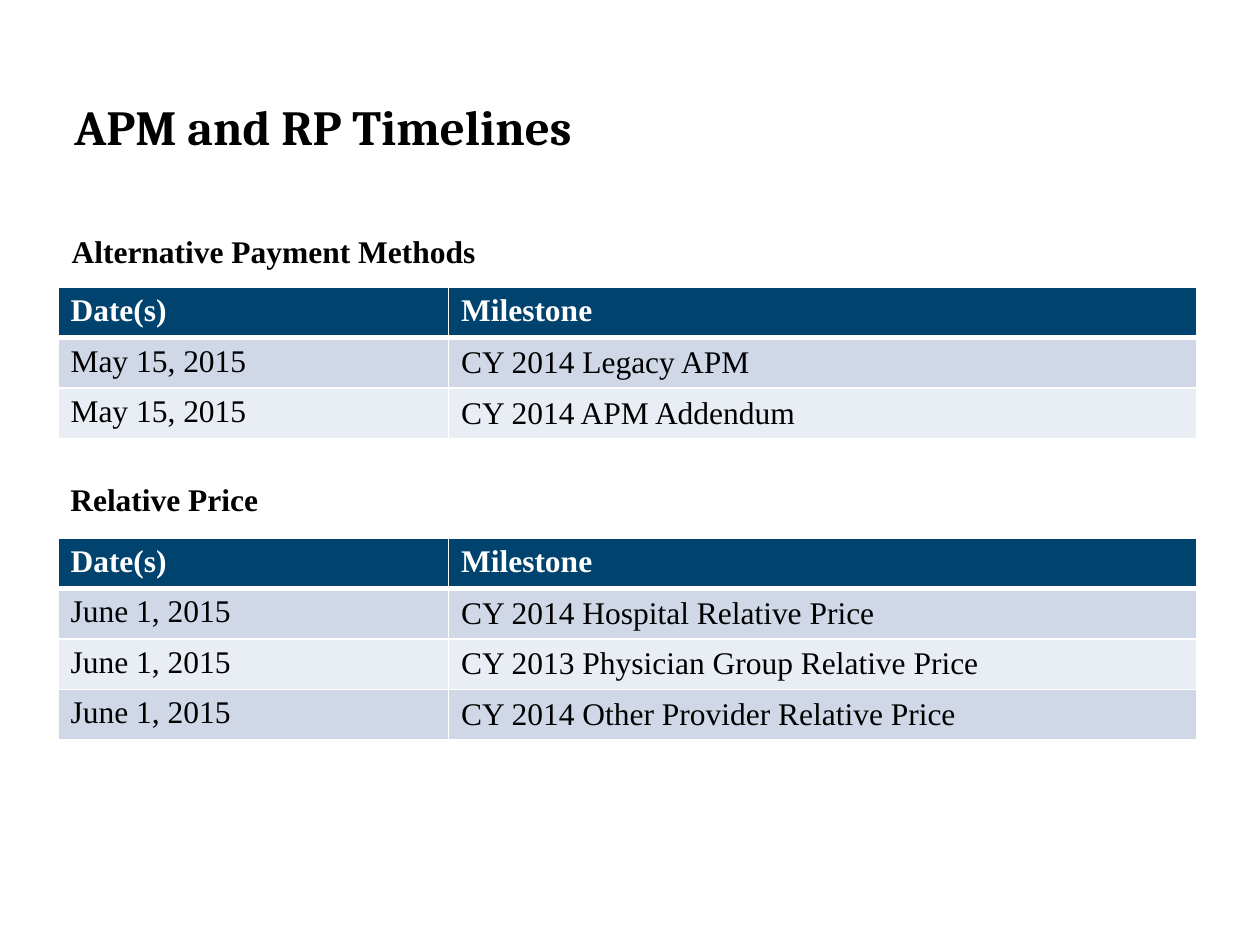
"""Build the APM and RP timelines slide with two milestone tables."""
import pptx
import pptx.dml.color
import pptx.enum.text
import pptx.oxml
import pptx.oxml.ns
import pptx.util

Inches = pptx.util.Inches
Pt = pptx.util.Pt
RGBColor = pptx.dml.color.RGBColor
MSO_ANCHOR = pptx.enum.text.MSO_ANCHOR

TITLE = "APM and RP Timelines"
HEADER = ("Date(s)", "Milestone")
SECTIONS = [
    {
        "heading": "Alternative Payment Methods",
        "heading_at": (0.47, 1.79),
        "table_top": 2.28,
        "rows": [
            ("May 15, 2015", "CY 2014 Legacy APM"),
            ("May 15, 2015", "CY 2014 APM Addendum"),
        ],
    },
    {
        "heading": "Relative Price",
        "heading_at": (0.46, 3.76),
        "table_top": 4.27,
        "rows": [
            ("June 1, 2015", "CY 2014 Hospital Relative Price"),
            ("June 1, 2015", "CY 2013 Physician Group Relative Price"),
            ("June 1, 2015", "CY 2014 Other Provider Relative Price"),
        ],
    },
]

BLACK = RGBColor(0x00, 0x00, 0x00)
WHITE = RGBColor(0xFF, 0xFF, 0xFF)
NAVY = RGBColor(0x00, 0x43, 0x6E)
BANDS = (RGBColor(0xD0, 0xD8, 0xE8), RGBColor(0xE9, 0xED, 0xF4))

TEXT_WIDTH = 8.79
TABLE_LEFT = 0.46
COL_WIDTHS = (3.1, 5.94)
ROW_HEIGHT = 0.4


def style(p, name, size, color, bold):
    p.font.name = name
    p.font.size = Pt(size)
    p.font.color.rgb = color
    p.font.bold = bold


def place(sp, left, top, width, height):
    sp.left, sp.top = Inches(left), Inches(top)
    sp.width, sp.height = Inches(width), Inches(height)


def add_borders(cell, widths):
    tcPr = cell._tc.get_or_add_tcPr()
    for side, width in widths.items():
        tcPr.append(pptx.oxml.parse_xml(
            f'<a:ln{side} {pptx.oxml.ns.nsdecls("a")} w="{Pt(width)}">'
            f'<a:solidFill><a:srgbClr val="{WHITE}"/></a:solidFill></a:ln{side}>'))


def add_heading(slide, text, left, top):
    sp = slide.shapes.add_textbox(
        Inches(left), Inches(top), Inches(TEXT_WIDTH), Inches(0.49))
    tf = sp.text_frame
    tf.word_wrap = True
    p = tf.paragraphs[0]
    p.text = text
    pPr = p._p.get_or_add_pPr()
    pPr.set("marL", str(Inches(0.38)))
    pPr.set("indent", str(Inches(-0.38)))
    style(p, "Times New Roman", 18, BLACK, True)


def add_milestones(slide, top, rows):
    rows = [HEADER, *rows]
    table = slide.shapes.add_table(
        len(rows), len(COL_WIDTHS), Inches(TABLE_LEFT), Inches(top),
        Inches(sum(COL_WIDTHS)), Inches(ROW_HEIGHT * len(rows))).table
    for column, width in zip(table.columns, COL_WIDTHS):
        column.width = Inches(width)
    for i, row in enumerate(rows):
        table.rows[i].height = Inches(ROW_HEIGHT)
        is_header = i == 0
        for j, text in enumerate(row):
            cell = table.cell(i, j)
            add_borders(cell, {"L": 1, "R": 1, "T": 3 if i == 1 else 1,
                               "B": 3 if is_header else 1})
            cell.fill.solid()
            cell.fill.fore_color.rgb = NAVY if is_header else BANDS[(i - 1) % 2]
            if j == 1 and not is_header:
                cell.vertical_anchor = MSO_ANCHOR.MIDDLE
            p = cell.text_frame.paragraphs[0]
            p.text = text
            style(p, "Times New Roman", 18, WHITE if is_header else BLACK, is_header)


def main():
    prs = pptx.Presentation()
    prs.slide_width, prs.slide_height = Inches(10), Inches(7.5)
    slide = prs.slides.add_slide(prs.slide_layouts[5])

    title = slide.shapes.title
    place(title, 0.49, 0.65, TEXT_WIDTH, 0.7)
    tf = title.text_frame
    tf.vertical_anchor = MSO_ANCHOR.MIDDLE
    p = tf.paragraphs[0]
    p.text = TITLE
    p.alignment = pptx.enum.text.PP_ALIGN.LEFT
    style(p, "Cambria", 28, BLACK, True)

    for section in SECTIONS:
        add_heading(slide, section["heading"], *section["heading_at"])
        add_milestones(slide, section["table_top"], section["rows"])

    prs.save("out.pptx")


if __name__ == "__main__":
    main()
